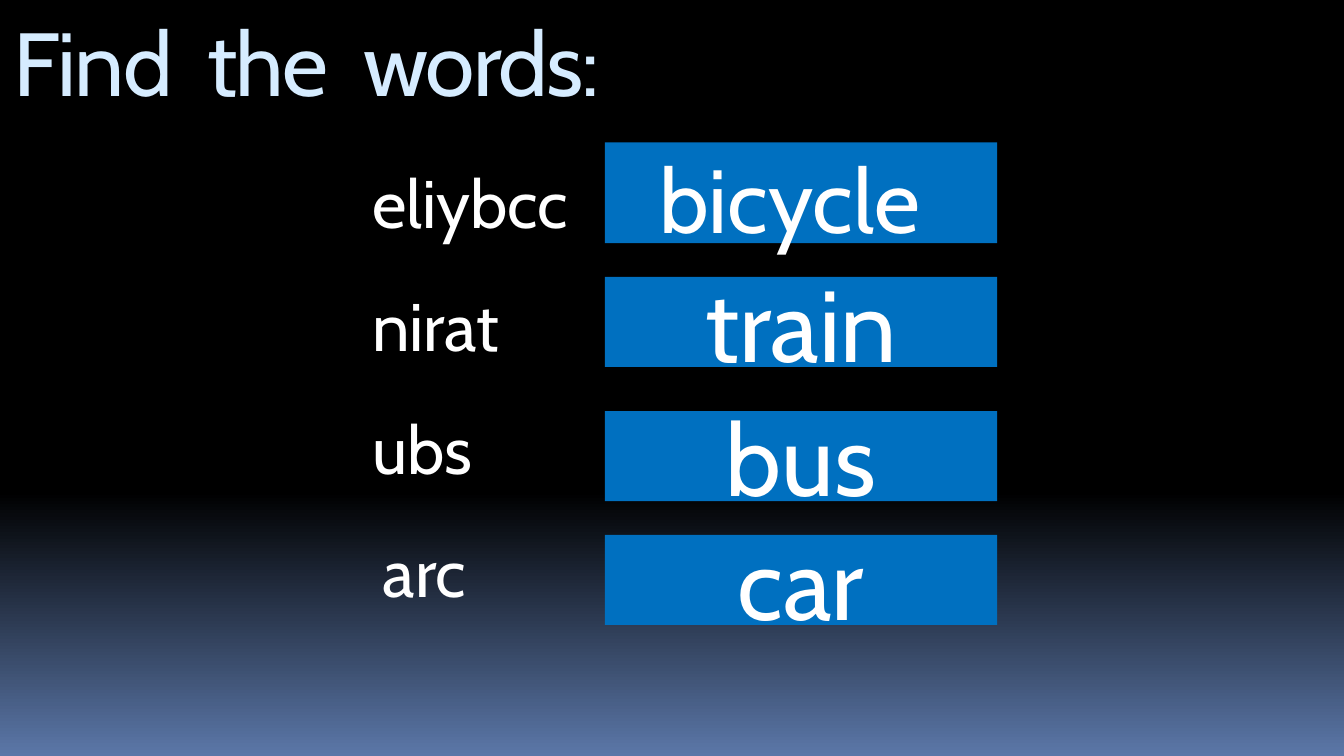
from copy import deepcopy

from pptx import Presentation
from pptx.dml.color import RGBColor
from pptx.enum.shapes import MSO_SHAPE
from pptx.enum.text import MSO_ANCHOR, MSO_AUTO_SIZE, PP_ALIGN
from pptx.oxml.ns import qn
from pptx.util import Inches, Pt

WIDTH = 10
HEIGHT = WIDTH * 9 / 16
FONT = "Cabin"
WHITE, ICE, BLUE = "FFFFFF", "D6ECFF", "0070C0"
SKY = [(0, "000000"), (0.65, "000000"), (1, "5B77A8")]

TITLE = "Find  the  words:"
PUZZLES = [
    {"scramble": "eliybcc", "left": 2.67, "width": 1.67,
     "answer": [("bicycle", 48), (" ", 54)], "top": 1.06, "height": 0.75},
    {"scramble": "nirat", "left": 2.67, "width": 1.42,
     "answer": [("train", 54)], "top": 2.06, "height": 0.67},
    {"scramble": "ubs", "left": 2.67, "width": 1.42,
     "answer": [("bus", 54)], "top": 3.06, "height": 0.67},
    {"scramble": "arc", "left": 2.75, "width": 0.92,
     "answer": [("car", 54)], "top": 3.98, "height": 0.67},
]
FIRST_SCRAMBLE, LAST_SCRAMBLE, SCRAMBLE_HEIGHT = 1.15, 3.9, 0.71
SCRAMBLE_PITCH = (LAST_SCRAMBLE - FIRST_SCRAMBLE) / (len(PUZZLES) - 1)
ANSWER_LEFT, ANSWER_WIDTH = 4.5, 2.92


def rgb(value):
    return RGBColor.from_string(value)


def box(left, top, width, height):
    return [Inches(length) for length in (left, top, width, height)]


def add_run(paragraph, text, size, color=WHITE):
    run = paragraph.add_run()
    run.text = text
    run.font.name = FONT
    run.font.size = Pt(size)
    run.font.bold = False
    run.font.color.rgb = rgb(color)
    return run


def paint_background(slide):
    fill = slide.background.fill
    fill.gradient()
    fill.gradient_angle = 270
    stop_list = slide.element.find(".//" + qn("a:gsLst"))
    stop_list.insert(1, deepcopy(stop_list[0]))
    for stop, (position, color) in zip(fill.gradient_stops, SKY):
        stop.position = position
        stop.color.rgb = rgb(color)


def add_title(slide):
    title = slide.shapes.title
    title.left, title.top, title.width, title.height = box(0, 0, WIDTH, 0.73)
    frame = title.text_frame
    frame.vertical_anchor = MSO_ANCHOR.TOP
    frame.auto_size = MSO_AUTO_SIZE.NONE
    heading = frame.paragraphs[0]
    heading.alignment = PP_ALIGN.LEFT
    run = add_run(heading, TITLE, 48, ICE)
    run.font._element.set("spc", "-100")
    run.font._element.set("kern", "0")
    heading.add_line_break()


def add_answer(slide, puzzle):
    answer = slide.shapes.add_shape(
        MSO_SHAPE.RECTANGLE,
        *box(ANSWER_LEFT, puzzle["top"], ANSWER_WIDTH, puzzle["height"]))
    answer.shadow.inherit = False
    answer.fill.solid()
    answer.fill.fore_color.rgb = rgb(BLUE)
    answer.line.fill.background()
    frame = answer.text_frame
    frame.word_wrap = True
    frame.vertical_anchor = MSO_ANCHOR.MIDDLE
    frame.paragraphs[0].alignment = PP_ALIGN.CENTER
    for text, size in puzzle["answer"]:
        add_run(frame.paragraphs[0], text, size)


def add_scramble(slide, row, puzzle):
    top = FIRST_SCRAMBLE + row * SCRAMBLE_PITCH
    scramble = slide.shapes.add_textbox(
        *box(puzzle["left"], top, puzzle["width"], SCRAMBLE_HEIGHT))
    frame = scramble.text_frame
    frame.word_wrap = True
    frame.auto_size = MSO_AUTO_SIZE.SHAPE_TO_FIT_TEXT
    add_run(frame.paragraphs[0], puzzle["scramble"], 36)


def main():
    deck = Presentation()
    deck.slide_width, deck.slide_height = Inches(WIDTH), Inches(HEIGHT)
    slide = deck.slides.add_slide(deck.slide_layouts[5])
    paint_background(slide)
    add_title(slide)
    for puzzle in PUZZLES:
        add_answer(slide, puzzle)
    for row, puzzle in enumerate(PUZZLES):
        add_scramble(slide, row, puzzle)
    deck.save("out.pptx")


if __name__ == "__main__":
    main()
